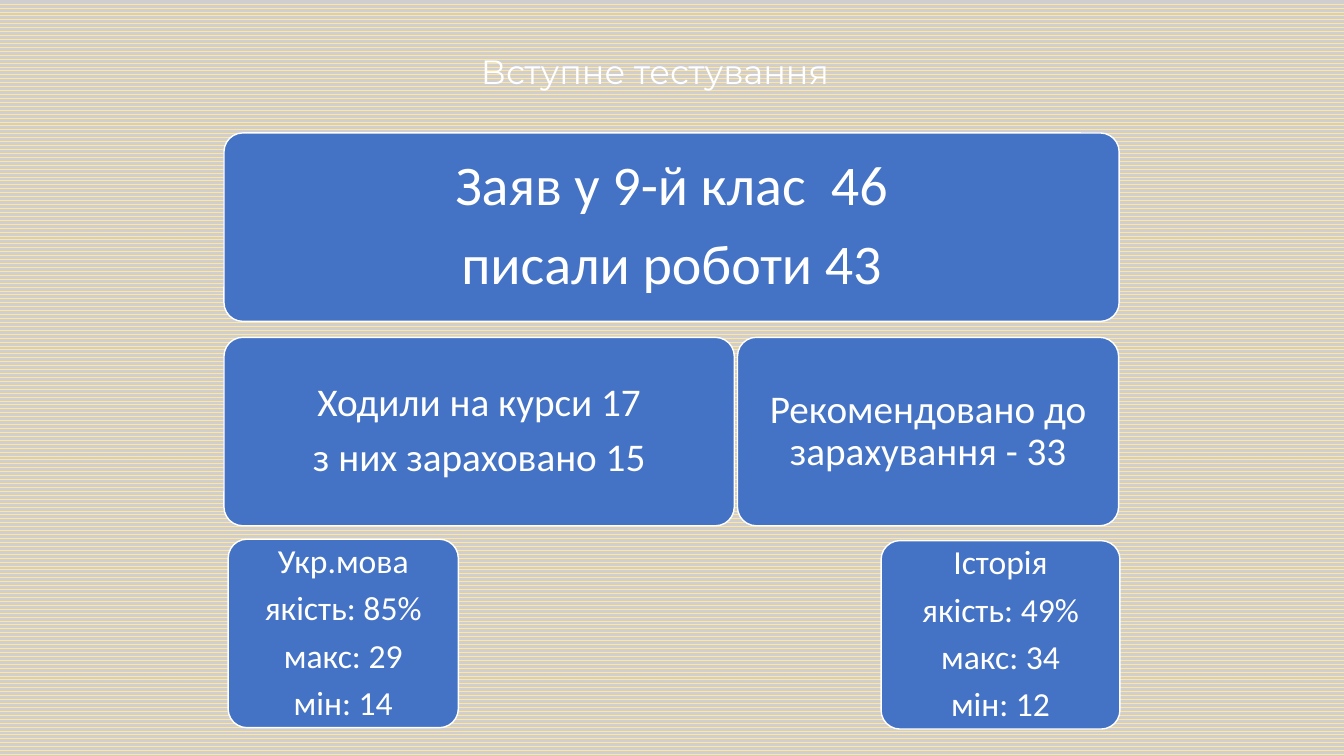
from pptx import Presentation
from pptx.dml.color import RGBColor
from pptx.enum.dml import MSO_PATTERN
from pptx.enum.shapes import MSO_SHAPE
from pptx.enum.text import MSO_ANCHOR, MSO_AUTO_SIZE, PP_ALIGN
from pptx.util import Pt

WAVE = MSO_PATTERN.WAVE
ROUND = MSO_SHAPE.ROUNDED_RECTANGLE
MIDDLE, TOP = MSO_ANCHOR.MIDDLE, MSO_ANCHOR.TOP
LEFT, CENTER = PP_ALIGN.LEFT, PP_ALIGN.CENTER
FIXED, GROW = MSO_AUTO_SIZE.NONE, MSO_AUTO_SIZE.SHAPE_TO_FIT_TEXT

COLORS = {"card": "4472C4", "white": "FFFFFF", "wave": "FFE699", "back": "D0CECE"}
CARD_H = 134.6
GAP = 0.33  # paragraph gap as a share of the text size


def color(name):
    return RGBColor.from_string(COLORS[name])


def apply(item, style):
    for key, value in style.items():
        setattr(item, key, value)


class Deck:
    def __init__(self):
        self.prs = Presentation()
        apply(self.prs, {"slide_width": Pt(960), "slide_height": Pt(540)})
        self.slide = self.prs.slides.add_slide(self.prs.slide_layouts[5])

    def backdrop(self):
        fill = self.slide.background.fill
        fill.patterned()
        fill.pattern = WAVE
        fill.fore_color.rgb = color("wave")
        fill.back_color.rgb = color("back")

    def label(self, frame, lines, font, size, align, spacing):
        frame.text = "\n".join(lines)
        for para in frame.paragraphs:
            apply(para, {"alignment": align, "line_spacing": spacing,
                         "space_before": Pt(0), "space_after": Pt(0)})
            for run in para.runs:
                apply(run.font, {"name": font, "size": Pt(size), "bold": False})
                run.font.color.rgb = color("white")
        for para in frame.paragraphs[:-1]:
            para.space_after = Pt(size * GAP)

    def title(self, text, left, top, width, height):
        shape = self.slide.shapes.title
        apply(shape, {"left": Pt(left), "top": Pt(top),
                      "width": Pt(width), "height": Pt(height)})
        frame = shape.text_frame
        apply(frame, {"word_wrap": False, "auto_size": GROW, "vertical_anchor": TOP,
                      "margin_left": Pt(7.2), "margin_right": Pt(7.2),
                      "margin_top": Pt(3.6), "margin_bottom": Pt(3.6)})
        self.label(frame, [text], "Montserrat", 24, LEFT, 1.0)

    def card(self, left, top, width, size, lines):
        shape = self.slide.shapes.add_shape(
            ROUND, Pt(left), Pt(top), Pt(width), Pt(CARD_H))
        shape.adjustments[0] = 0.1
        shape.shadow.inherit = False
        shape.fill.solid()
        shape.fill.fore_color.rgb = color("card")
        shape.line.color.rgb = color("white")
        shape.line.width = Pt(1)
        inset = Pt(4 + size * 0.3)
        frame = shape.text_frame
        apply(frame, {"word_wrap": True, "auto_size": FIXED, "vertical_anchor": MIDDLE,
                      "margin_left": inset, "margin_right": inset,
                      "margin_top": inset, "margin_bottom": inset})
        self.label(frame, lines, "Calibri", size, CENTER, 0.9)


CARDS = [
    (160, 95, 639.4, 40, ["Заяв у 9-й клас  46", "писали роботи 43"]),
    (160, 241, 364.5, 28, ["Ходили на курси 17", "з них зараховано 15"]),
    (163, 385.2, 164.4, 24, ["Укр.мова", "якість: 85%", "макс: 29", "мін: 14"]),
    (629.4, 386.2, 170.6, 24, ["Історія", "якість: 49%", "макс: 34", "мін: 12"]),
    (526.8, 241, 272.2, 28, ["Рекомендовано до зарахування - 33"]),
]


def main():
    deck = Deck()
    deck.backdrop()
    for card in CARDS:
        deck.card(*card)
    deck.title("Вступне тестування", 336.3, 33, 287, 36)
    deck.prs.save("out.pptx")


if __name__ == "__main__":
    main()
